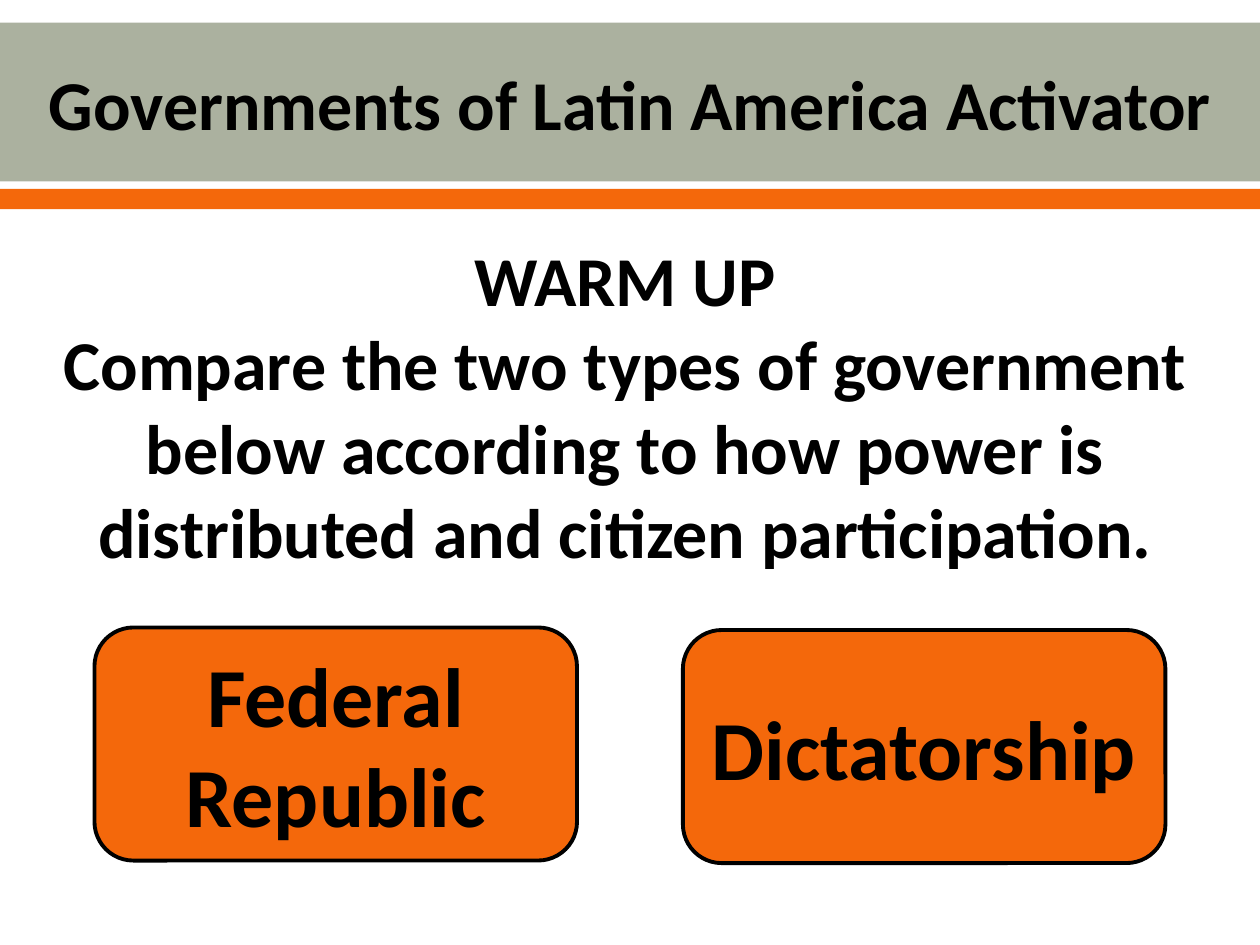
from dataclasses import dataclass

from pptx import Presentation
from pptx.dml.color import RGBColor
from pptx.enum.shapes import MSO_SHAPE
from pptx.enum.text import MSO_ANCHOR, PP_ALIGN
from pptx.util import Inches, Pt

TITLE = "Governments of Latin America Activator"
PROMPT = [
    "WARM UP",
    "Compare the two types of government below according to how power is "
    "distributed and citizen participation.",
]
GOVERNMENTS = [
    ("Federal\vRepublic", (0.75, 4.98, 3.83, 1.85)),
    ("Dictatorship", (5.42, 5, 3.83, 1.85)),
]


@dataclass(frozen=True)
class Theme:
    font: str = "Calibri"
    text: RGBColor = RGBColor(0, 0, 0)
    band: RGBColor = RGBColor(0xAB, 0xB1, 0x9F)
    accent: RGBColor = RGBColor(0xF4, 0x68, 0x0B)
    body_size: Pt = Pt(40)
    card_size: Pt = Pt(48)
    outline: Pt = Pt(2.22)


THEME = Theme()


def write(shape, lines, size, anchor=MSO_ANCHOR.MIDDLE):
    frame = shape.text_frame
    frame.word_wrap = True
    frame.vertical_anchor = anchor
    for index, line in enumerate(lines):
        paragraph = frame.add_paragraph() if index else frame.paragraphs[0]
        paragraph.text = line
        paragraph.alignment = PP_ALIGN.CENTER
        paragraph.font.name = THEME.font
        paragraph.font.size = size
        paragraph.font.bold = True
        paragraph.font.color.rgb = THEME.text


def add_block(slide, kind, box, fill, outlined=False):
    shape = slide.shapes.add_shape(kind, *map(Inches, box))
    shape.shadow.inherit = False
    shape.fill.solid()
    shape.fill.fore_color.rgb = fill
    if outlined:
        shape.line.color.rgb = THEME.text
        shape.line.width = THEME.outline
    else:
        shape.line.fill.background()
    return shape


def main():
    presentation = Presentation()
    presentation.slide_width = Inches(10)
    presentation.slide_height = Inches(7.5)
    slide = presentation.slides.add_slide(presentation.slide_layouts[6])

    add_block(slide, MSO_SHAPE.RECTANGLE, (0, 0.18, 10, 1.26), THEME.band)
    add_block(slide, MSO_SHAPE.RECTANGLE, (0, 1.5, 10, 0.16), THEME.accent)

    title = slide.shapes.add_textbox(*map(Inches, (0, 0.2, 10, 1.22)))
    write(title, [TITLE], THEME.body_size)
    prompt = slide.shapes.add_textbox(*map(Inches, (0.17, 1.83, 9.58, 2.79)))
    write(prompt, PROMPT, THEME.body_size, MSO_ANCHOR.TOP)

    for name, box in GOVERNMENTS:
        card = add_block(slide, MSO_SHAPE.ROUNDED_RECTANGLE, box, THEME.accent, outlined=True)
        write(card, [name], THEME.card_size)

    presentation.save("out.pptx")


if __name__ == "__main__":
    main()
